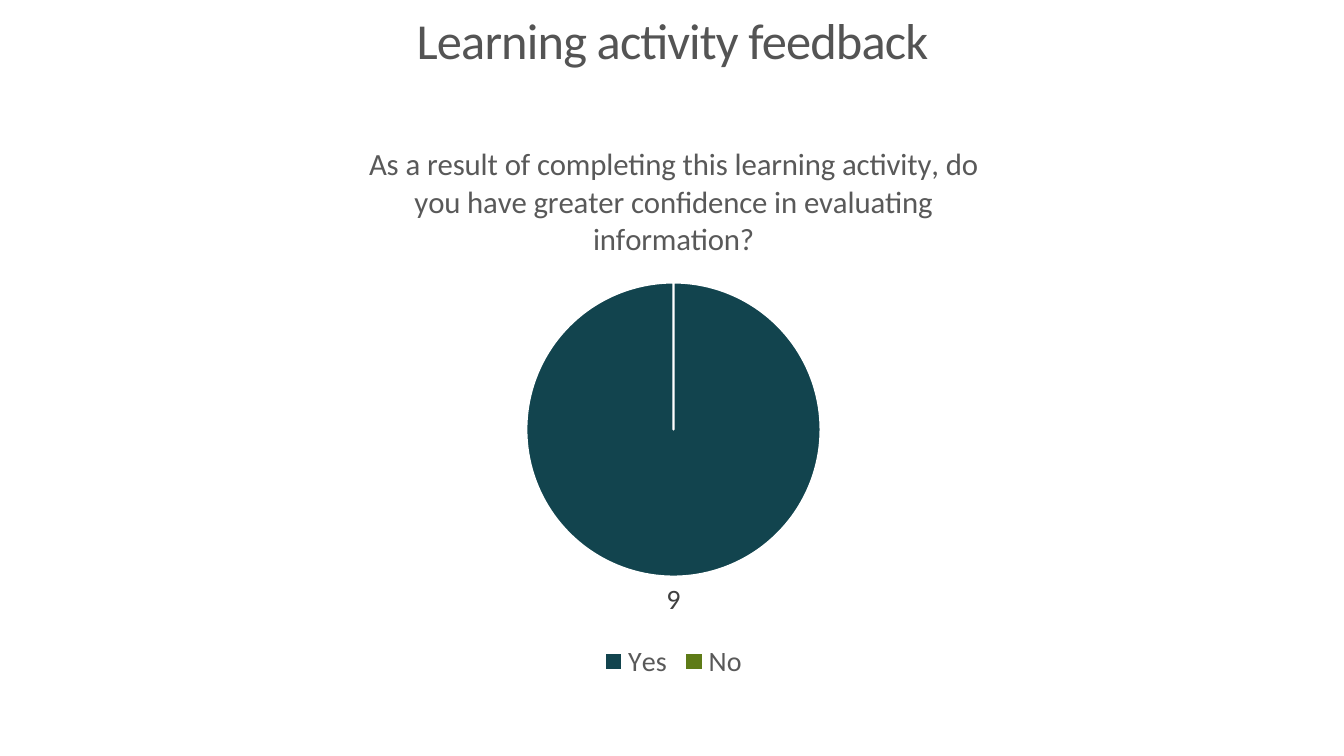
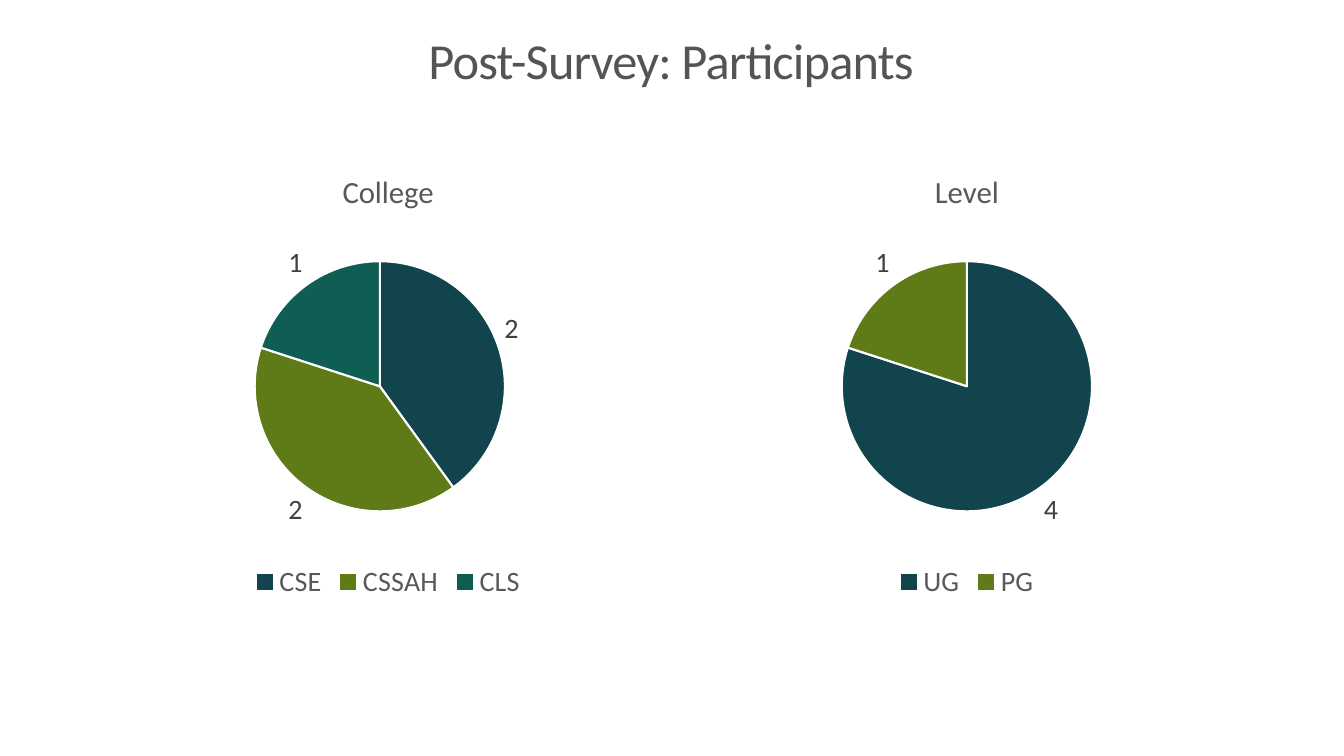
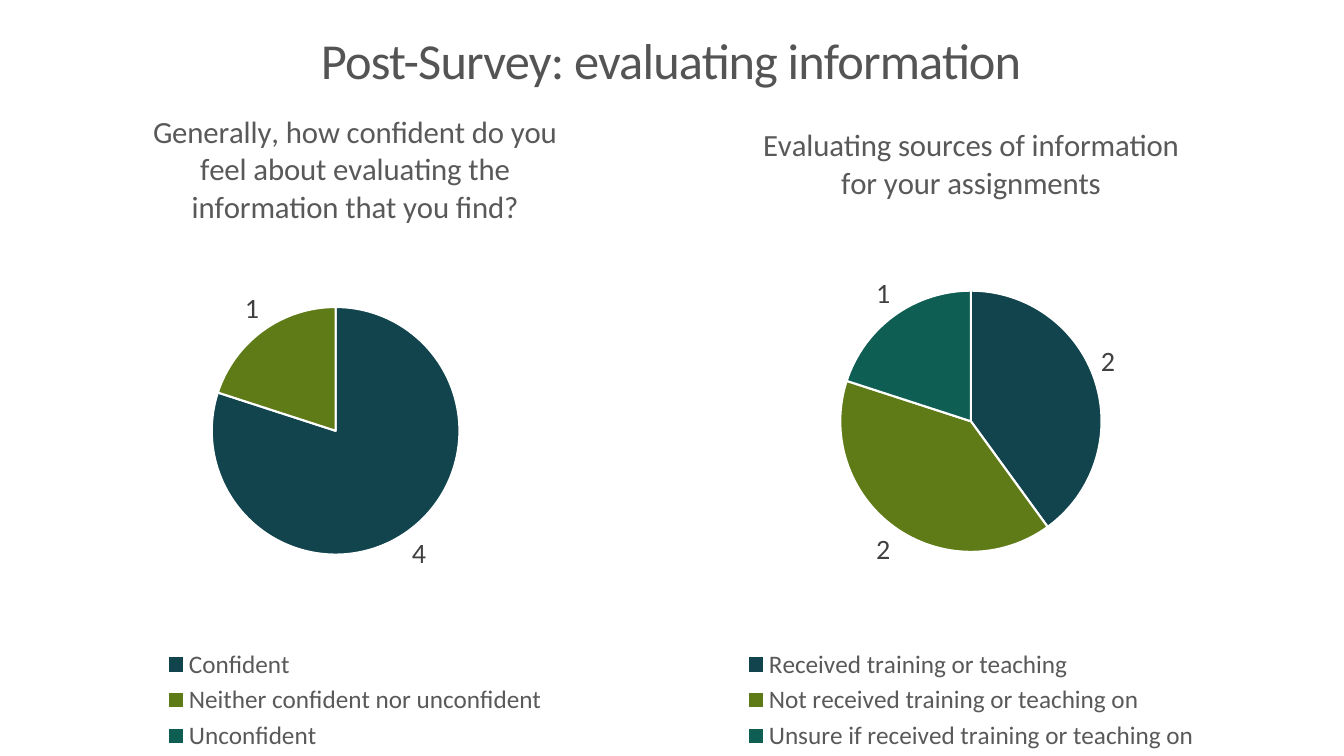
"""Build three slides of survey results shown as pie charts."""
from lxml import etree
from pptx import Presentation
from pptx import util as u
from pptx.chart.data import CategoryChartData
from pptx.dml.color import RGBColor
from pptx.enum import chart as ch, text as tx
from pptx.oxml.ns import qn

WIDE, HIGH = 13.33, 7.5
FONT = "Calibri"
HUES = {"head": "545454", "text": "595959", "label": "404040", "edge": "FFFFFF",
        "first": "12444E", "second": "5E7B17", "third": "0E5E54"}
PARTS = ("first", "second", "third")
MID = (0.99, 0, 11.33, 1.25)
ROW, TALL, SIDE = 1.49, 4.51, 4.56


def tint(name):
    return RGBColor.from_string(HUES[name])


def style(font, size, hue):
    font.name, font.size, font.bold = FONT, u.Pt(size), False
    font.color.rgb = tint(hue)


def add_head(slide, words, box):
    frame = slide.shapes.add_textbox(*map(u.Inches, box)).text_frame
    frame.word_wrap = True
    frame.vertical_anchor = tx.MSO_ANCHOR.MIDDLE
    para = frame.paragraphs[0]
    para.alignment, para.line_spacing = tx.PP_ALIGN.CENTER, 0.9
    run = para.add_run()
    run.text = words
    style(para.font, 36, "head")
    run.font._element.set("spc", "-60")


def set_plot(chart, area):
    plot = chart._chartSpace.chart.plotArea
    for old in plot.findall(qn("c:layout")):
        plot.remove(old)
    layout = etree.Element(qn("c:layout"))
    plot.insert(0, layout)
    manual = etree.SubElement(layout, qn("c:manualLayout"))
    pairs = [("layoutTarget", "inner"), ("xMode", "edge"), ("yMode", "edge")]
    for tag, val in pairs + list(zip("xywh", area)):
        etree.SubElement(manual, qn(f"c:{tag}")).set("val", str(val))


def add_pie(slide, box, title, counts, size=20, area=None):
    data = CategoryChartData()
    data.categories = list(counts)
    data.add_series(title, list(counts.values()))
    chart = slide.shapes.add_chart(
        ch.XL_CHART_TYPE.PIE, *map(u.Inches, box), data).chart
    chart.font.name, chart.font.size = FONT, u.Pt(10)
    chart.has_title = True
    para = chart.chart_title.text_frame.paragraphs[0]
    para.text = title
    style(para.font, 22, "text")
    chart.chart_title.include_in_layout = False
    chart.has_legend = True
    chart.legend.position = ch.XL_LEGEND_POSITION.BOTTOM
    chart.legend.include_in_layout = False
    style(chart.legend.font, size, "text")
    plot = chart.plots[0]
    plot.vary_by_categories = True
    for i, hue in enumerate(PARTS[:len(counts)]):
        look = plot.series[0].points[i].format
        look.fill.solid()
        look.fill.fore_color.rgb = tint(hue)
        look.line.color.rgb = tint("edge")
        look.line.width = u.Pt(1.5)
    labels = plot.series[0].data_labels
    labels.show_value = True
    labels.position = ch.XL_LABEL_POSITION.OUTSIDE_END
    labels.number_format, labels.number_format_is_linked = "0;;", False
    style(labels.font, 20, "label")
    if area:
        set_plot(chart, area)


def main():
    deck = Presentation()
    deck.slide_width, deck.slide_height = u.Inches(WIDE), u.Inches(HIGH)
    first, second, third = (deck.slides.add_slide(deck.slide_layouts[6])
                            for _ in range(3))

    add_head(first, "Learning activity feedback", (2.88, 0, 7.58, 0.85))
    add_pie(first, (2.68, 1.19, 8, 5.6),
            "As a result of completing this learning activity, do you have "
            "greater confidence in evaluating information?", {"Yes": 9, "No": 0})

    add_head(second, "Post-Survey: Participants", MID)
    add_pie(second, (1.57, ROW, SIDE, TALL), "College",
            {"CSE": 2, "CSSAH": 2, "CLS": 1})
    add_pie(second, (7.31, ROW, SIDE, TALL), "Level", {"UG": 4, "PG": 1})

    add_head(third, "Post-Survey: evaluating information", MID)
    add_pie(third, (0.79, 0.85, 5.46, HIGH - 0.85),
            "Generally, how confident do you feel about evaluating the "
            "information that you find?",
            {"Confident": 4, "Neither confident nor unconfident": 1,
             "Unconfident": 0}, 18, (0.24, 0.33, 0.45, 0.37))
    add_pie(third, (6.93, 0.99, 5.4, HIGH - 0.99),
            "Evaluating sources of information for your assignments",
            {"Received training or teaching": 2,
             "Not received training or teaching on": 2,
             "Unsure if received training or teaching on": 1},
            18, (0.26, 0.29, 0.48, 0.4))
    deck.save("out.pptx")


if __name__ == "__main__":
    main()
